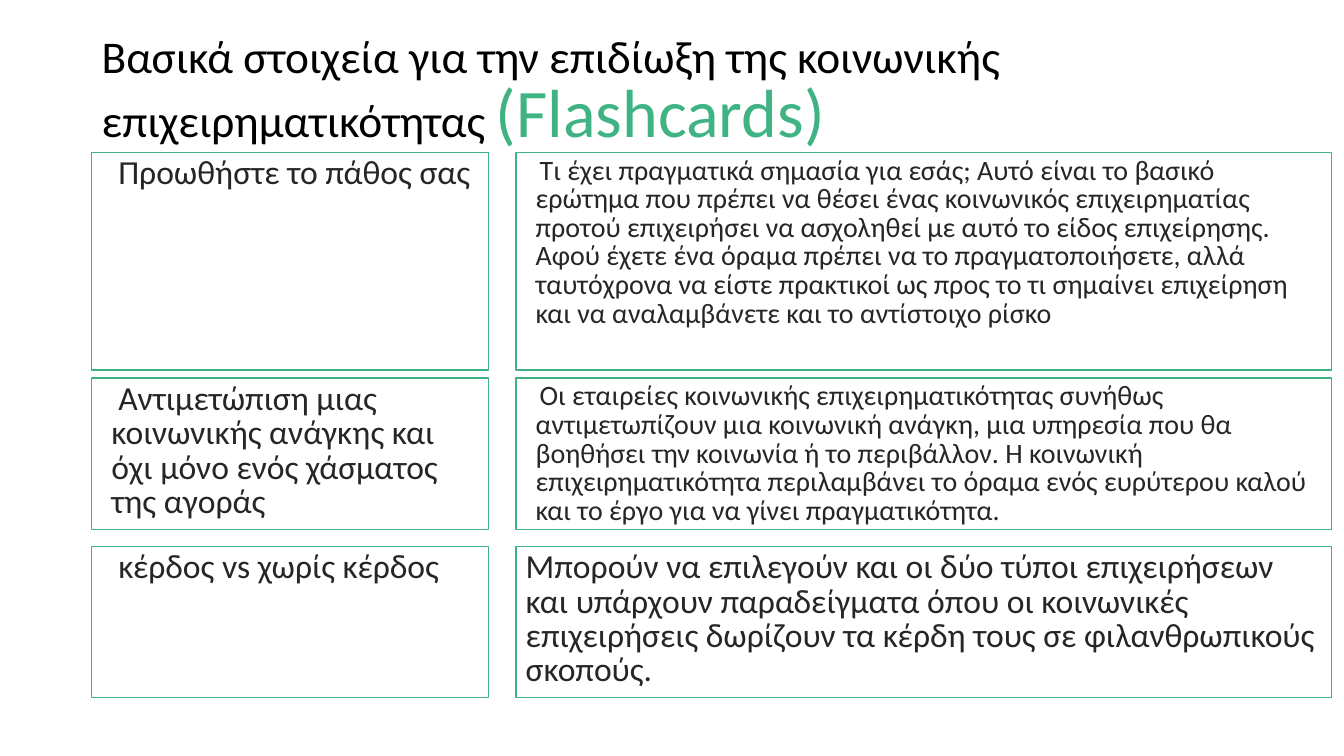
from lxml.etree import SubElement
from pptx import Presentation
from pptx.dml.color import RGBColor
from pptx.enum.shapes import MSO_SHAPE as Shape
from pptx.enum.text import MSO_ANCHOR as Anchor, MSO_AUTO_SIZE as AutoSize, PP_ALIGN as Align
from pptx.oxml.ns import qn
from pptx.util import Cm, Pt

COLORS = {"black": "000000", "green": "40B385", "text": "262626", "card": "FFFFFF"}
FONT = "Calibri"
LINE_SPACING = 0.85

TITLE = [
    ("Βασικά στοιχεία για την επιδίωξη της κοινωνικής επιχειρηματικότητας ", 32.4, "black"),
    ("(Flashcards)", 48.6, "green"),
]
FLASHCARDS = [
    {
        "topic": "Προωθήστε το πάθος σας",
        "answer": "Τι έχει πραγματικά σημασία για εσάς; Αυτό είναι το βασικό ερώτημα που πρέπει "
                  "να θέσει ένας κοινωνικός επιχειρηματίας προτού επιχειρήσει να ασχοληθεί με αυτό "
                  "το είδος επιχείρησης. Αφού έχετε ένα όραμα πρέπει να το πραγματοποιήσετε, αλλά "
                  "ταυτόχρονα να είστε πρακτικοί ως προς το τι σημαίνει επιχείρηση και να "
                  "αναλαμβάνετε και το αντίστοιχο ρίσκο",
        "size": 20, "indented": True, "top": 3.84, "height": 5.49,
    },
    {
        "topic": "Αντιμετώπιση μιας κοινωνικής ανάγκης και όχι μόνο ενός χάσματος της αγοράς",
        "answer": "Οι εταιρείες κοινωνικής επιχειρηματικότητας συνήθως αντιμετωπίζουν μια "
                  "κοινωνική ανάγκη, μια υπηρεσία που θα βοηθήσει την κοινωνία ή το περιβάλλον. "
                  "Η κοινωνική επιχειρηματικότητα περιλαμβάνει το όραμα ενός ευρύτερου καλού και "
                  "το έργο για να γίνει πραγματικότητα.",
        "size": 20, "indented": True, "top": 9.53, "height": 3.81,
    },
    {
        "topic": "κέρδος vs χωρίς κέρδος",
        "answer": "Μπορούν να επιλεγούν και οι δύο τύποι επιχειρήσεων και υπάρχουν παραδείγματα "
                  "όπου οι κοινωνικές επιχειρήσεις δωρίζουν τα κέρδη τους σε φιλανθρωπικούς σκοπούς.",
        "size": 24, "indented": False, "top": 13.77, "height": 3.81,
    },
]
TOPIC_LEFT, TOPIC_WIDTH = 2.31, 10.01
ANSWER_LEFT, ANSWER_WIDTH = 13.0, 20.55
TOPIC_SIZE = 24


def color(name):
    return RGBColor.from_string(COLORS[name])


def format_run(run, size, tint):
    run.font.name = FONT
    run.font.size = Pt(size)
    run.font.color.rgb = color(tint)


def format_frame(frame, anchor):
    frame.word_wrap = True
    frame.auto_size = AutoSize.NONE
    frame.vertical_anchor = anchor
    paragraph = frame.paragraphs[0]
    paragraph.alignment = Align.LEFT
    paragraph.line_spacing = LINE_SPACING
    paragraph.space_before = Pt(0)
    return paragraph


def add_blank_bullet(paragraph):
    properties = paragraph._p.get_or_add_pPr()
    properties.set("marL", str(Cm(0.25)))
    properties.set("indent", str(-Cm(0.25)))
    bullet_color = SubElement(properties, qn("a:buClr"))
    SubElement(bullet_color, qn("a:srgbClr"), val=COLORS["text"])
    SubElement(properties, qn("a:buChar"), char=" ")


def add_card(slide, text, left, top, width, height, size, indented):
    card = slide.shapes.add_shape(Shape.RECTANGLE, Cm(left), Cm(top), Cm(width), Cm(height))
    card.shadow.inherit = False
    card.fill.solid()
    card.fill.fore_color.rgb = color("card")
    card.line.color.rgb = color("green")
    card.line.width = Pt(1)
    card.text_frame.text = text
    paragraph = format_frame(card.text_frame, Anchor.TOP)
    format_run(paragraph.runs[0], size, "text")
    if indented:
        add_blank_bullet(paragraph)


def main():
    deck = Presentation()
    deck.slide_width, deck.slide_height = Cm(33.87), Cm(19.05)
    slide = deck.slides.add_slide(deck.slide_layouts[5])

    title = slide.shapes.title
    title.left, title.top, title.width, title.height = Cm(2.31), Cm(0.89), Cm(29.92), Cm(2.95)
    heading = format_frame(title.text_frame, Anchor.MIDDLE)
    for text, size, tint in TITLE:
        run = heading.add_run()
        run.text = text
        format_run(run, size, tint)

    for flashcard in FLASHCARDS:
        top, height = flashcard["top"], flashcard["height"]
        add_card(slide, flashcard["answer"], ANSWER_LEFT, top, ANSWER_WIDTH, height,
                 flashcard["size"], flashcard["indented"])
        add_card(slide, flashcard["topic"], TOPIC_LEFT, top, TOPIC_WIDTH, height,
                 TOPIC_SIZE, True)

    deck.save("out.pptx")


if __name__ == "__main__":
    main()
